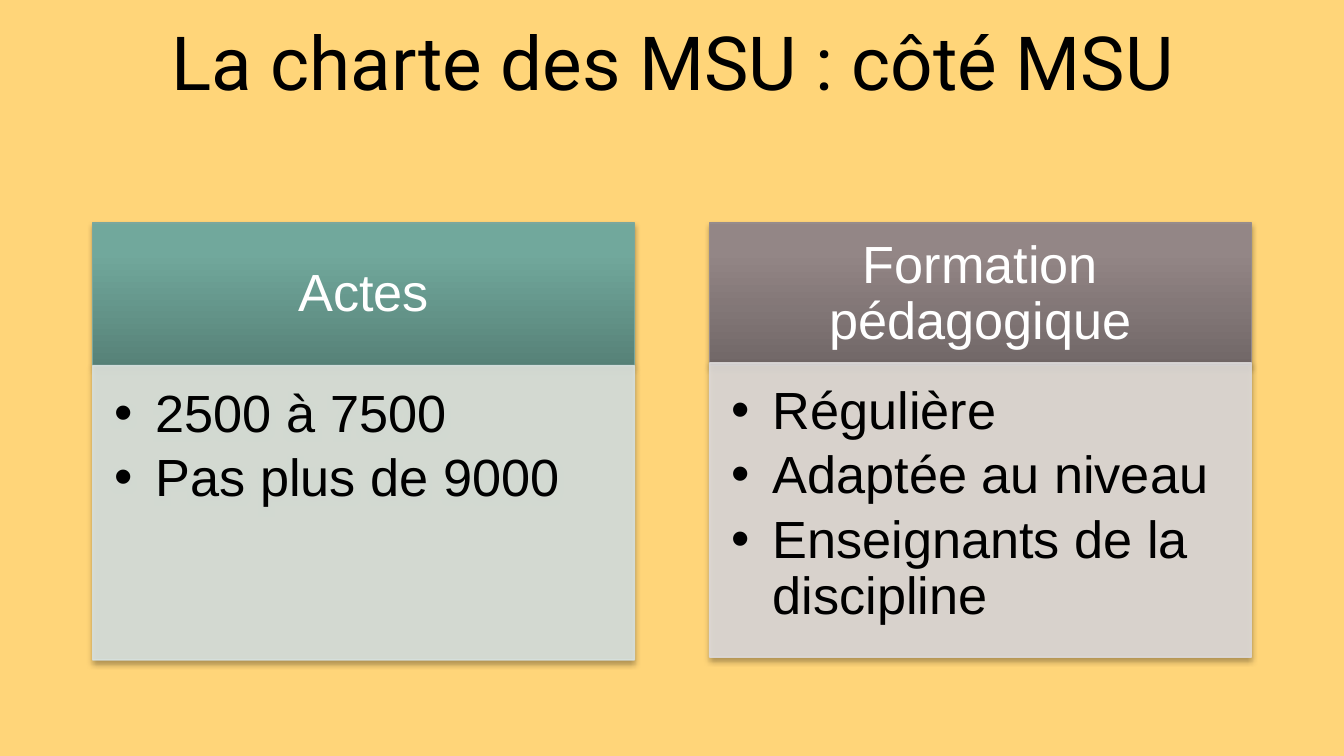
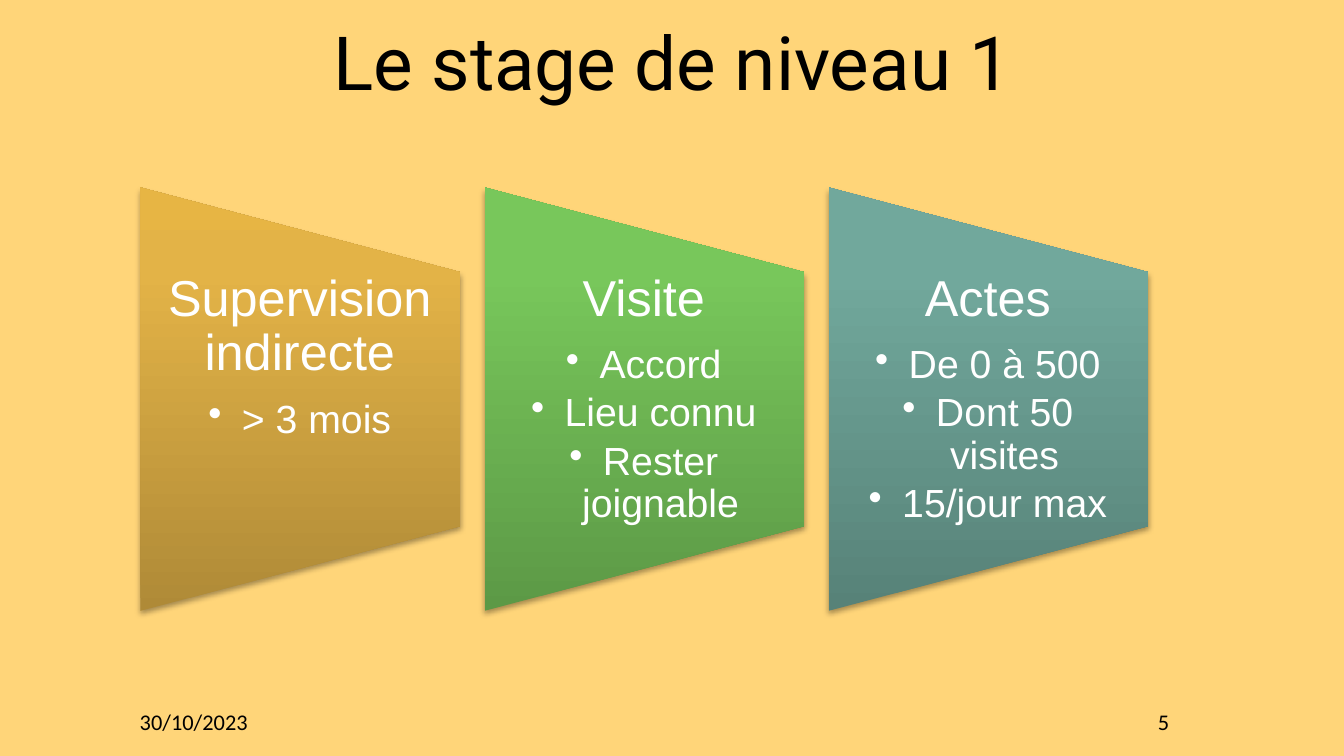
from pptx import Presentation
from pptx import oxml
from pptx import util as u
from pptx.dml.color import RGBColor
from pptx.enum import shapes, text
from pptx.oxml import ns


class Theme:
    background = "FFD579"
    dark, light = "000000", "FFFFFF"
    # Gradient stops, from the bottom up
    teal = ("578278", "71A89C", "70AA9D")
    taupe = ("716767", "938686", "948787")
    gold = ("AF8A37", "E3B347", "E7B544")
    green = ("5C9946", "78C75B", "77CA59")
    stops = (0, 80, 100)
    teal_line, taupe_line = "7BA79D", "968C8C"
    teal_pale, taupe_pale = "D7E1DF", "DDDADA"
    title_font, body_font, footer_font = "Roboto", "Arial", "Calibri"
    title, panel, card, item, footer = 40, 28, 27, 21, 12


ALIGN, ANCHOR = text.PP_ALIGN, text.MSO_ANCHOR

deck = Presentation()
deck.slide_width, deck.slide_height = u.Inches(10), u.Inches(5.625)
cell = deck.slide_width / 100  # square grid, 100 columns wide


def place(shape, at, colors=(), line=None, alpha=100, inset=(0, 0, 0, 0), anchor=ANCHOR.MIDDLE):
    """Put a shape on the grid, set its text area, and paint it if colours are given."""
    shape.left, shape.top, shape.width, shape.height = [round(v * cell) for v in at]
    frame = shape.text_frame
    frame.word_wrap, frame.auto_size, frame.vertical_anchor = True, text.MSO_AUTO_SIZE.NONE, anchor
    frame.margin_left, frame.margin_top, frame.margin_right, frame.margin_bottom = [
        round(v * cell) for v in inset]
    if not colors:
        return shape

    def solid(color):
        return (f'<a:solidFill {ns.nsdecls("a")}><a:srgbClr val="{color}">'
                f'<a:alpha val="{alpha * 1000}"/></a:srgbClr></a:solidFill>')

    fill = solid(colors[0])
    if len(colors) > 1:
        stops = "".join(f'<a:gs pos="{stop * 1000}"><a:srgbClr val="{color}"/></a:gs>'
                        for stop, color in zip(Theme.stops, colors))
        fill = (f'<a:gradFill {ns.nsdecls("a")} rotWithShape="0"><a:gsLst>{stops}</a:gsLst>'
                '<a:lin ang="16200000" scaled="0"/></a:gradFill>')
    outline = (f'<a:ln {ns.nsdecls("a")} w="{u.Pt(0.75)}">'
               f'{solid(line) if line else "<a:noFill/>"}</a:ln>')
    shadow = (f'<a:effectLst {ns.nsdecls("a")}><a:outerShdw blurRad="{u.Pt(3.1)}" '
              f'dist="{u.Pt(1.8)}" dir="5400000" rotWithShape="0"><a:srgbClr val="{Theme.dark}">'
              '<a:alpha val="35000"/></a:srgbClr></a:outerShdw></a:effectLst>')
    for part in (fill, outline, shadow):
        shape.element.spPr.append(oxml.parse_xml(part))
    return shape


def write(box, words, size, color=Theme.dark, font=Theme.body_font, align=ALIGN.CENTER,
          spacing=0.9, after=0, hang=0):
    """Add a paragraph; after is a share of the size, hang the bullet indent in cells."""
    frame = box.text_frame
    para = frame.add_paragraph() if frame.text else frame.paragraphs[0]
    if hang:
        para.level = 1
        properties = para._p.get_or_add_pPr()
        properties.set("marL", str(round(hang * cell)))
        properties.set("indent", str(-round(hang * cell)))
        properties.append(oxml.parse_xml(f'<a:buChar {ns.nsdecls("a")} char="•"/>'))
    para.alignment, para.line_spacing = align, spacing
    para.space_before, para.space_after = u.Pt(0), u.Pt(size * after)
    span = para.add_run()
    span.text = words
    span.font.name, span.font.size, span.font.bold = font, u.Pt(size), False
    span.font.color.rgb = RGBColor.from_string(color)


# Shared background and titled pages
backdrop = deck.slide_master.background.fill
backdrop.solid()
backdrop.fore_color.rgb = RGBColor.from_string(Theme.background)

pages = []
for layout, heading in (("Comparison", "La charte des MSU : côté MSU"),
                        ("Title Only", "Le stage de niveau 1")):
    page = deck.slides.add_slide(deck.slide_layouts.get_by_name(layout))
    title = place(page.shapes.title, (2, 1.2, 96.1, 7.3))
    write(title, heading, Theme.title, font=Theme.title_font, spacing=0.93)
    pages.append(page)
charter, internship = pages

# Charter: two panels, each a header above a list
panels = [
    ("Actes", ["2500 à 7500", "Pas plus de 9000"],
     Theme.teal, Theme.teal_line, Theme.teal_pale, 27.2),
    ("Formation pédagogique", ["Régulière", "Adaptée au niveau", "Enseignants de la discipline"],
     Theme.taupe, Theme.taupe_line, Theme.taupe_pale, 27),
]
for column, (heading, items, colors, line, pale, list_top) in enumerate(panels):
    left = 6.9 + 45.9 * column
    header = place(charter.placeholders[1 + 2 * column], (left, 16.6, 40.3, 10.6), colors, line,
                   inset=(2.2, 1.2, 2.2, 1.2))
    write(header, heading, Theme.panel, Theme.light, after=0.35)
    body = place(charter.placeholders[2 + 2 * column], (left, list_top, 40.3, 21.9), [pale], pale,
                 alpha=90, inset=(1.6, 1.6, 2.2, 2.4), anchor=ANCHOR.TOP)
    for item in items:
        write(body, item, Theme.panel, align=ALIGN.LEFT, after=0.15, hang=3.1)

# Internship: three cards, trapezoids turned on their side
cards = [
    ("Supervision indirecte", ["> 3 mois"], Theme.gold),
    ("Visite", ["Accord", "Lieu connu", "Rester joignable"], Theme.green),
    ("Actes", ["De 0 à 500", "Dont 50 visites", "15/jour max"], Theme.teal),
]
for column, (heading, items, colors) in enumerate(cards):
    shift = 25.6 * column
    card = internship.shapes.add_shape(shapes.MSO_SHAPE.FLOWCHART_MANUAL_OPERATION, 0, 0, 0, 0)
    place(card, (6.6 + shift, 17.8, 31.5, 23.8), colors)
    card.rotation = 270
    box = place(internship.shapes.add_textbox(0, 0, 0, 0), (10.4 + shift, 20.3, 23.8, 18.9),
                inset=(1.9, 0, 1.9, 0), anchor=ANCHOR.TOP)
    write(box, heading, Theme.card, Theme.light, after=0.35)
    for item in items:
        write(box, item, Theme.item, Theme.light, after=0.15, hang=2.5)

# Internship footer: date and page number
for words, left, width, align in (("30/10/2023", 10.4, 10.4, ALIGN.LEFT),
                                  ("5", 74.4, 12.6, ALIGN.RIGHT)):
    box = place(internship.shapes.add_textbox(0, 0, 0, 0), (left, 51.8, width, 3.9))
    write(box, words, Theme.footer, font=Theme.footer_font, align=align, spacing=0.95)

deck.save("out.pptx")
